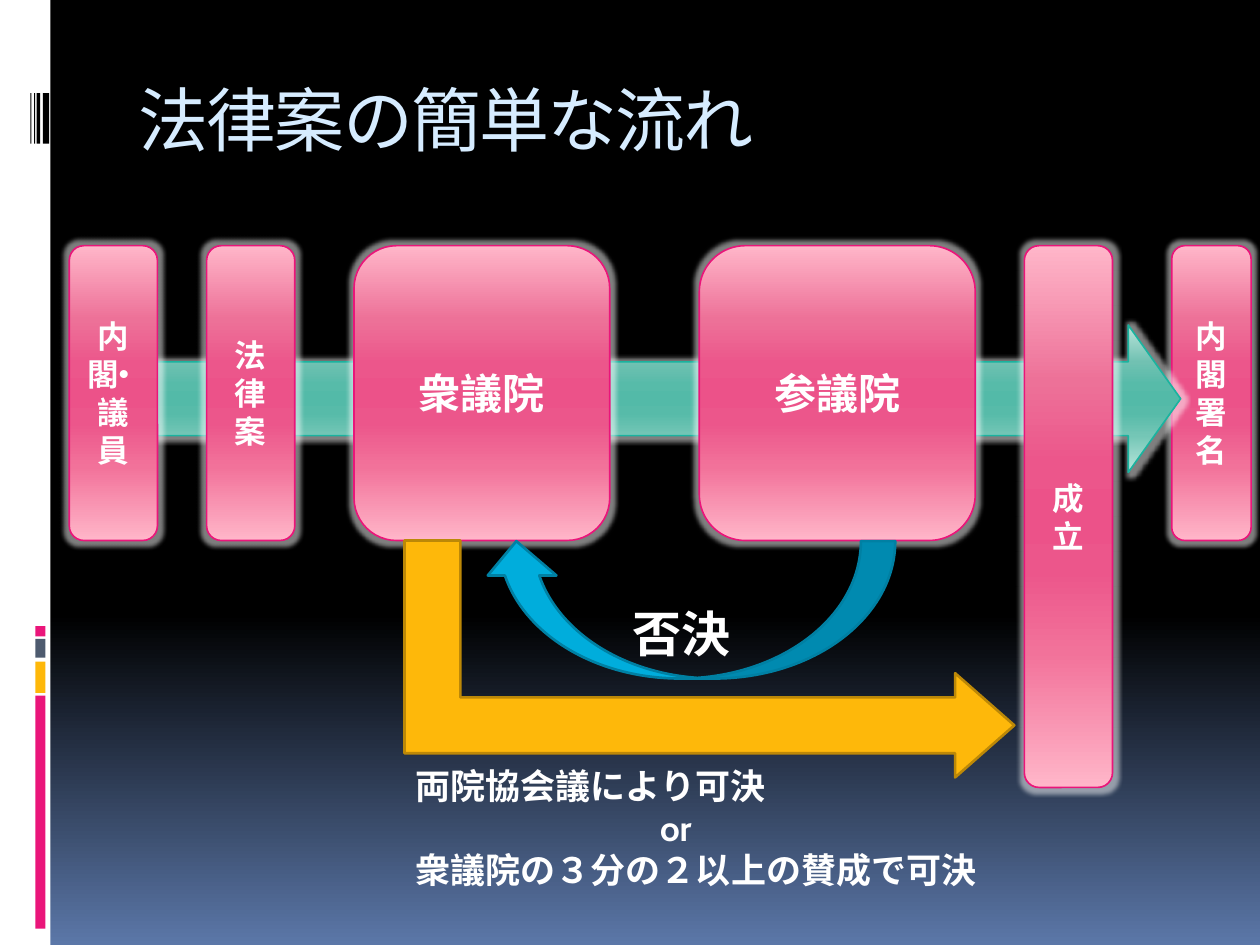
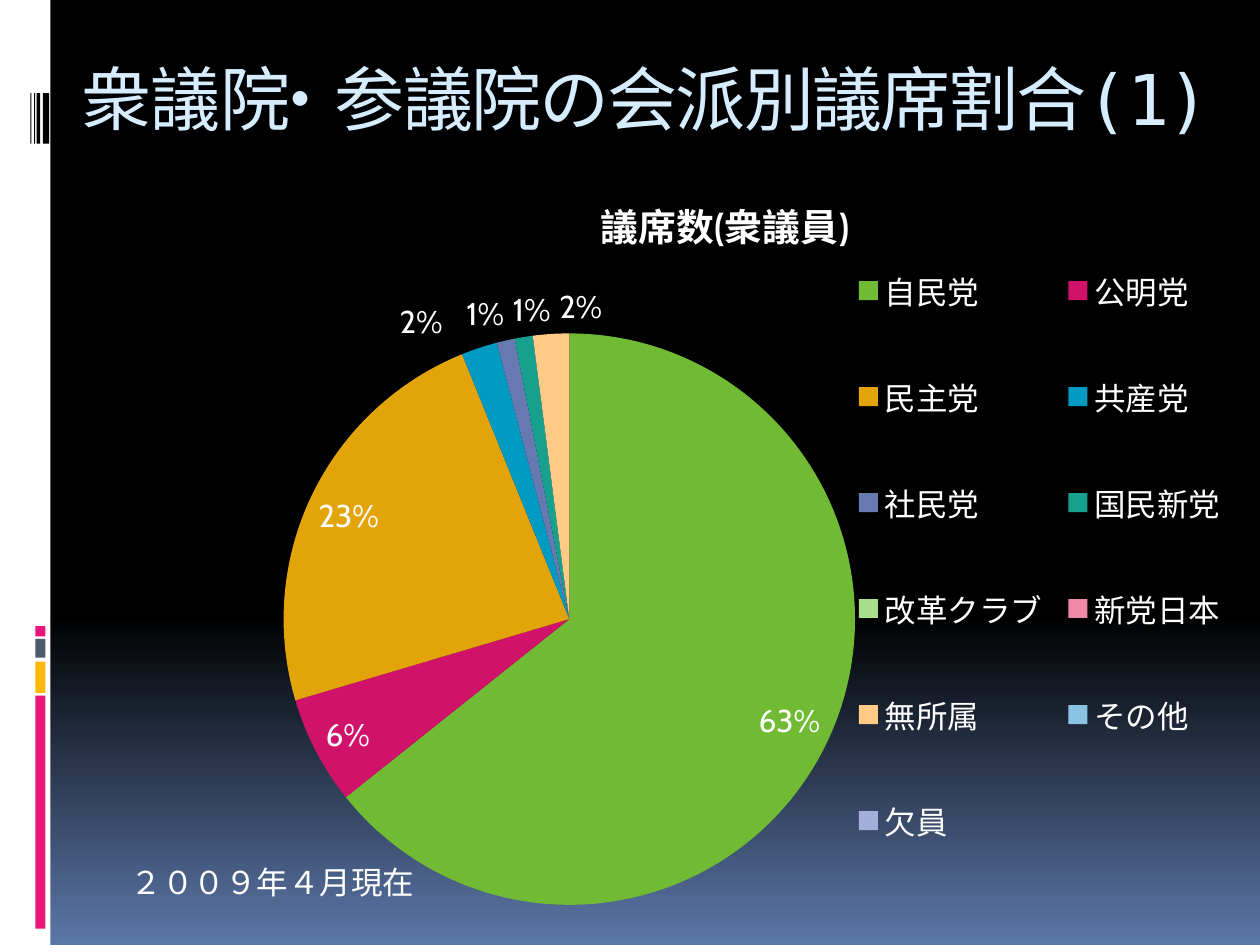
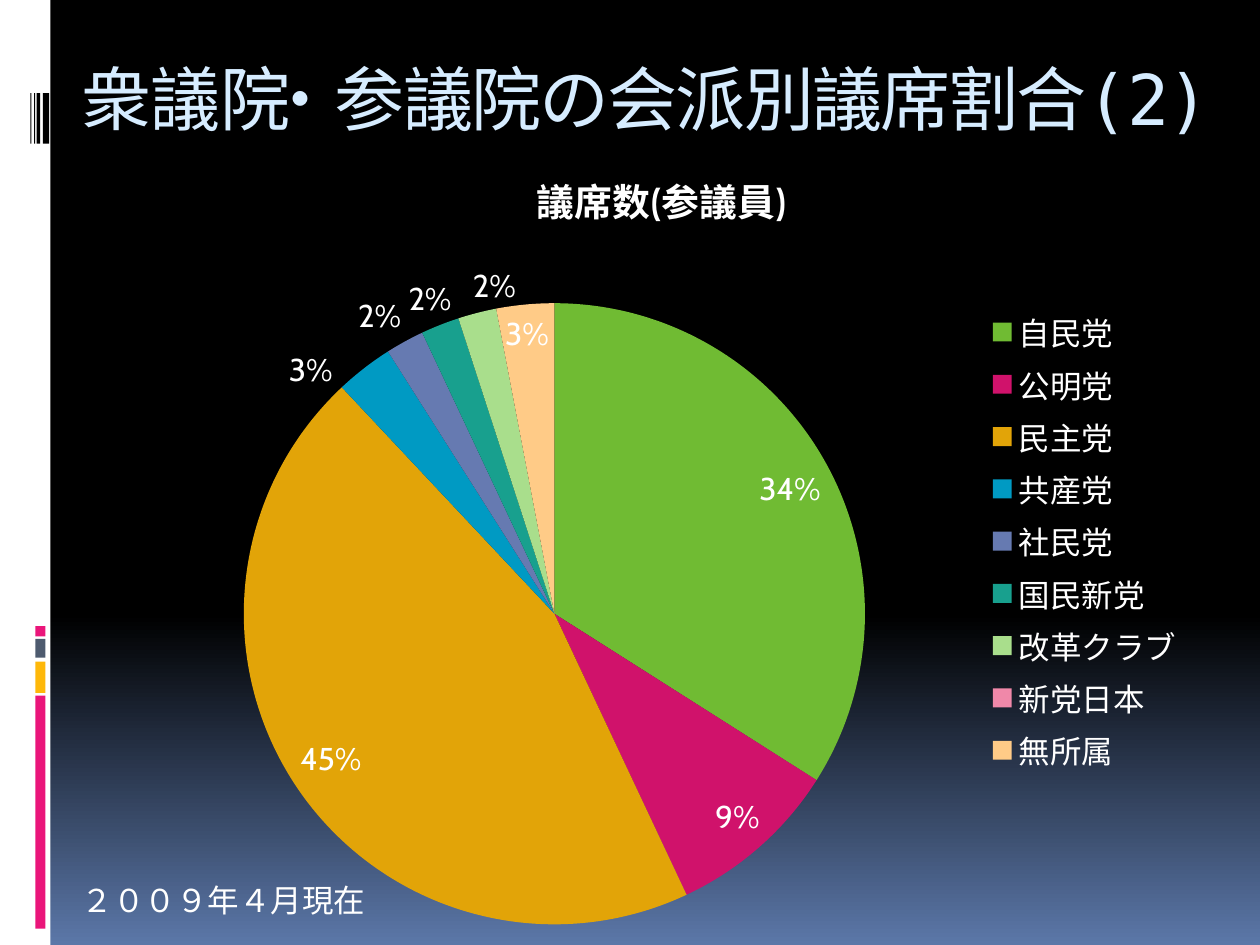
from dataclasses import dataclass

from lxml.etree import SubElement
from pptx import Presentation
from pptx.chart.data import CategoryChartData
from pptx.dml.color import RGBColor
from pptx.enum.chart import XL_CHART_TYPE, XL_LABEL_POSITION, XL_LEGEND_POSITION
from pptx.enum.shapes import MSO_SHAPE as Preset
from pptx.enum.text import MSO_ANCHOR, MSO_AUTO_SIZE, PP_ALIGN
from pptx.oxml.ns import qn
from pptx.util import Inches, Pt


@dataclass(frozen=True)
class Theme:
    white: str = "FFFFFF"
    black: str = "000000"
    title: str = "D6ECFF"
    pink: str = "EA157A"
    amber: str = "FEB80A"
    amber_edge: str = "BC8807"
    slate: str = "4E5B6F"
    teal: str = "1AB39F"
    blue: str = "00ADDC"
    blue_edge: str = "0080A3"
    sky: tuple = ((0, "000000"), (65, "000000"), (100, "5B77A8"))
    pink_sheen: tuple = (
        (0, "FFB6C9"), (25, "ED7198"), (40, "EC568B"), (50, "EC5289"),
        (60, "EC568B"), (75, "F2729A"), (100, "FFB6C9"))
    teal_sheen: tuple = (
        (0, "BBE5DB"), (25, "71C1B2"), (40, "57BBA9"), (50, "53BAA8"),
        (60, "57BBA9"), (75, "74C6B6"), (100, "B9E6DC"))
    slices: tuple = (
        "70BB33", "D0126B", "E2A408", "009AC3", "667AB1", "18A08E",
        "A9DE8C", "F088A9", "FFCB87", "8AC4E4", "A3AFDA")
    body_font: str = "Cabin"
    title_font: str = "DejaVu Sans Mono"
    title_size: float = 40
    title_spacing: float = -1
    dot_tightening: float = 0.33
    verdict_size: float = 28
    house_size: float = 24
    chart_title_size: float = 21.6
    note_size: float = 20
    body_size: float = 18
    thin_line: float = 0.94
    thick_line: float = 1.5


THEME = Theme()


def rgb(color):
    return RGBColor.from_string(color)


def place(shape, at):
    shape.left, shape.top, shape.width, shape.height = map(Inches, at)


def paint_gradient(fill, element, stops):
    """Give fill a top-to-bottom gradient; element is the XML that holds it."""
    fill.gradient()
    fill.gradient_angle = 270
    stop_list = next(element.iter(qn("a:gsLst")))
    stop_list.clear()
    for percent, color in stops:
        stop = SubElement(stop_list, qn("a:gs"), pos=str(percent * 1000))
        SubElement(stop, qn("a:srgbClr"), val=color)


def style_font(font, size, color=THEME.white, bold=False, name=THEME.body_font):
    font.name, font.size, font.bold = name, Pt(size), bold
    font.color.rgb = rgb(color)


def style_runs(frame, size, **style):
    for para in frame.paragraphs:
        for span in para.runs:
            style_font(span.font, size, **style)


def set_spacing(para, size, spacing=0):
    """Set letter spacing in points, closing the wide gaps around a middle dot."""
    before, dot, after = para.text.partition("・")
    if dot:
        para.text = before[:-1]
        para.add_run().text = before[-1] + dot
        para.add_run().text = after
    for span in para.runs:
        tightening = size * THEME.dot_tightening if "・" in span.text else 0
        points = spacing - tightening
        span._r.get_or_add_rPr().set("spc", str(round(points * 100)))


def add_preset(slide, preset, at, fill, edge=None, edge_width=THEME.thick_line,
               adjustments=(), rotation=0):
    """fill is one colour, or a tuple of gradient stops."""
    shape = slide.shapes.add_shape(preset, *map(Inches, at))
    shape.shadow.inherit = False
    shape.rotation = rotation
    for index, value in enumerate(adjustments):
        shape.adjustments[index] = value
    if isinstance(fill, tuple):
        paint_gradient(shape.fill, shape.element, fill)
    else:
        shape.fill.solid()
        shape.fill.fore_color.rgb = rgb(fill)
    if edge:
        shape.line.color.rgb = rgb(edge)
        shape.line.width = Pt(edge_width)
    else:
        shape.line.fill.background()
    return shape


def add_glow(shape):
    effects = next(shape.element.iter(qn("a:effectLst")))
    glow = SubElement(effects, qn("a:glow"), rad=str(Inches(0.07)))
    color = SubElement(glow, qn("a:srgbClr"), val=THEME.white)
    SubElement(color, qn("a:alpha"), val="50000")


def add_stage(slide, label, left, width, height=2.34, size=THEME.body_size):
    stage = add_preset(slide, Preset.ROUNDED_RECTANGLE, (left, 1.95, width, height),
                       THEME.pink_sheen, THEME.pink, THEME.thin_line)
    add_glow(stage)
    frame = stage.text_frame
    frame.text = label
    frame.word_wrap = True
    frame.vertical_anchor = MSO_ANCHOR.MIDDLE
    frame.paragraphs[0].alignment = PP_ALIGN.CENTER
    set_spacing(frame.paragraphs[0], size)
    style_runs(frame, size, bold=True)


def add_text(slide, text, at, size, bold=False):
    box = slide.shapes.add_textbox(*map(Inches, at))
    frame = box.text_frame
    frame.word_wrap = True
    frame.text = text
    style_runs(frame, size, bold=bold)
    return frame


def add_titled_slide(deck, text, at):
    slide = deck.slides.add_slide(deck.slide_layouts[5])
    title = slide.shapes.title
    place(title, at)
    frame = title.text_frame
    frame.text = text
    frame.auto_size = MSO_AUTO_SIZE.NONE
    frame.vertical_anchor = MSO_ANCHOR.TOP
    frame.paragraphs[0].alignment = PP_ALIGN.LEFT
    set_spacing(frame.paragraphs[0], THEME.title_size, THEME.title_spacing)
    style_runs(frame, THEME.title_size, color=THEME.title, name=THEME.title_font)
    return slide


def decorate_master(deck, slide):
    """Draw the side band with a slide's shape tools, then move it to the master."""
    master = deck.slide_master
    paint_gradient(master.background.fill, master.element, THEME.sky)
    bars = [((0, 0, 0.4, 7.5), THEME.white)]
    bars += [((0.28, top, 0.08, height), color) for top, height, color in (
        (5.52, 1.85, THEME.pink), (5.25, 0.25, THEME.amber),
        (5.07, 0.15, THEME.slate), (4.97, 0.08, THEME.pink))]
    bars += [((left, 0.74, width, 0.4), THEME.black) for left, width in (
        (0.34, 0.05), (0.29, 0.03), (0.27, 0.01), (0.24, 0.01))]
    for index, (at, color) in enumerate(bars):
        bar = add_preset(slide, Preset.RECTANGLE, at, color)
        bar.element.nvSpPr.cNvPr.set("id", str(100 + index))
        master.shapes.element.insert(2 + index, bar.element)


def set_layout(chart, part, x, y, width=None, height=None):
    """Fix a chart part's place, in fractions of the chart's size."""
    element = next(chart.element.iter(qn(part)))
    for old in element.findall(qn("c:layout")):
        element.remove(old)
    layout = SubElement(element, qn("c:layout"))
    element.insert(0 if part == "c:plotArea" else 1, layout)
    manual = SubElement(layout, qn("c:manualLayout"))
    if part == "c:plotArea":
        SubElement(manual, qn("c:layoutTarget"), val="inner")
    for tag in ("xMode", "yMode"):
        SubElement(manual, qn("c:" + tag), val="edge")
    for tag, value in zip("xywh", (x, y, width, height)):
        if value is not None:
            SubElement(manual, qn("c:" + tag), val=str(value))


def add_seat_pie(slide, title, shares, at, pie_at):
    """Draw shares, a mapping of party to percent of seats, as a pie."""
    data = CategoryChartData()
    data.categories = list(shares)
    data.add_series(title, list(shares.values()))
    chart = slide.shapes.add_chart(XL_CHART_TYPE.PIE, *map(Inches, at), data).chart
    style_font(chart.font, THEME.body_size)

    chart.has_title = True
    chart.chart_title.text_frame.text = title
    style_runs(chart.chart_title.text_frame, THEME.chart_title_size, bold=True)

    chart.has_legend = True
    chart.legend.position = XL_LEGEND_POSITION.RIGHT
    chart.legend.include_in_layout = False

    plot = chart.plots[0]
    plot.vary_by_categories = True
    for index, color in zip(range(len(shares)), THEME.slices):
        fill = plot.series[0].points[index].format.fill
        fill.solid()
        fill.fore_color.rgb = rgb(color)
    plot.has_data_labels = True
    labels = plot.data_labels
    labels.show_value = True
    labels.number_format = '0"%"'
    labels.number_format_is_linked = False
    labels.position = XL_LABEL_POSITION.BEST_FIT
    for leader_lines in chart.element.iter(qn("c:showLeaderLines")):
        leader_lines.set("val", "0")
    set_layout(chart, "c:plotArea", *pie_at)
    return chart


def add_survey_date(slide, at):
    add_text(slide, "２００９年４月現在", at, THEME.body_size)


def build_bill_flow(slide):
    add_stage(slide, "内閣署名", 9.3, 0.63)
    flow = add_preset(slide, Preset.RIGHT_ARROW, (0.78, 2.58, 8.59, 1.17),
                      THEME.teal_sheen, THEME.teal, THEME.thin_line, (0.5, 0.355))
    add_glow(flow)
    add_stage(slide, "法律案", 1.64, 0.7)
    add_stage(slide, "衆議院", 2.81, 2.03, size=THEME.house_size)
    add_stage(slide, "参議院", 5.55, 2.19, size=THEME.house_size)
    add_stage(slide, "成立", 8.13, 0.7, height=4.3)
    add_stage(slide, "内閣・議員", 0.55, 0.7)

    add_preset(slide, Preset.CURVED_LEFT_ARROW, (4.92, 3.2, 1.09, 3.28),
               THEME.blue, THEME.blue_edge, rotation=90)
    add_text(slide, "否決", (4.92, 4.74, 1.17, 0.57), THEME.verdict_size, bold=True)
    add_preset(slide, Preset.BENT_UP_ARROW, (4.69, 2.81, 1.88, 4.84), THEME.amber,
               THEME.amber_edge, adjustments=(0.236, 0.22, 0.25), rotation=90)
    routes = add_text(
        slide, "両院協会議により可決\nor\n衆議院の３分の２以上の賛成で可決",
        (3.2, 6.02, 5.86, 1.11), THEME.note_size, bold=True)
    routes.paragraphs[1]._p.get_or_add_pPr().set("marL", str(Inches(1.94)))


def build_lower_house(slide):
    shares = {"自民党": 63, "公明党": 6, "民主党": 23, "共産党": 2, "社民党": 1,
              "国民新党": 1, "改革クラブ": 0, "新党日本": 0, "無所属": 2,
              "その他": 0, "欠員": 0}
    chart = add_seat_pie(slide, "議席数(衆議員)", shares,
                         (0.55, 1.41, 9.45, 5.94), (0.18, 0.2, 0.48, 0.78))
    set_layout(chart, "c:title", 0.44, 0.01)
    set_layout(chart, "c:legend", 0.65, 0.04, 0.33, 0.93)
    add_survey_date(slide, (0.94, 6.8, 2.73, 0.4))


def build_upper_house(slide):
    shares = {"自民党": 34, "公明党": 9, "民主党": 45, "共産党": 3, "社民党": 2,
              "国民新党": 2, "改革クラブ": 2, "新党日本": 0, "無所属": 3}
    add_seat_pie(slide, "議席数(参議員)", shares,
                 (1, 1.09, 8.5, 6.41), (0.11, 0.2, 0.58, 0.78))
    add_survey_date(slide, (0.55, 6.94, 2.5, 0.4))


def main():
    deck = Presentation()
    deck.slide_width, deck.slide_height = Inches(10), Inches(7.5)
    flow = add_titled_slide(deck, "法律案の簡単な流れ", (1, 0.56, 8.5, 1))
    decorate_master(deck, flow)
    build_bill_flow(flow)
    for number, build in enumerate((build_lower_house, build_upper_house), start=1):
        build(add_titled_slide(deck, f"衆議院・参議院の会派別議席割合({number})",
                               (0.55, 0.39, 9.7, 1)))
    deck.save("out.pptx")


if __name__ == "__main__":
    main()
